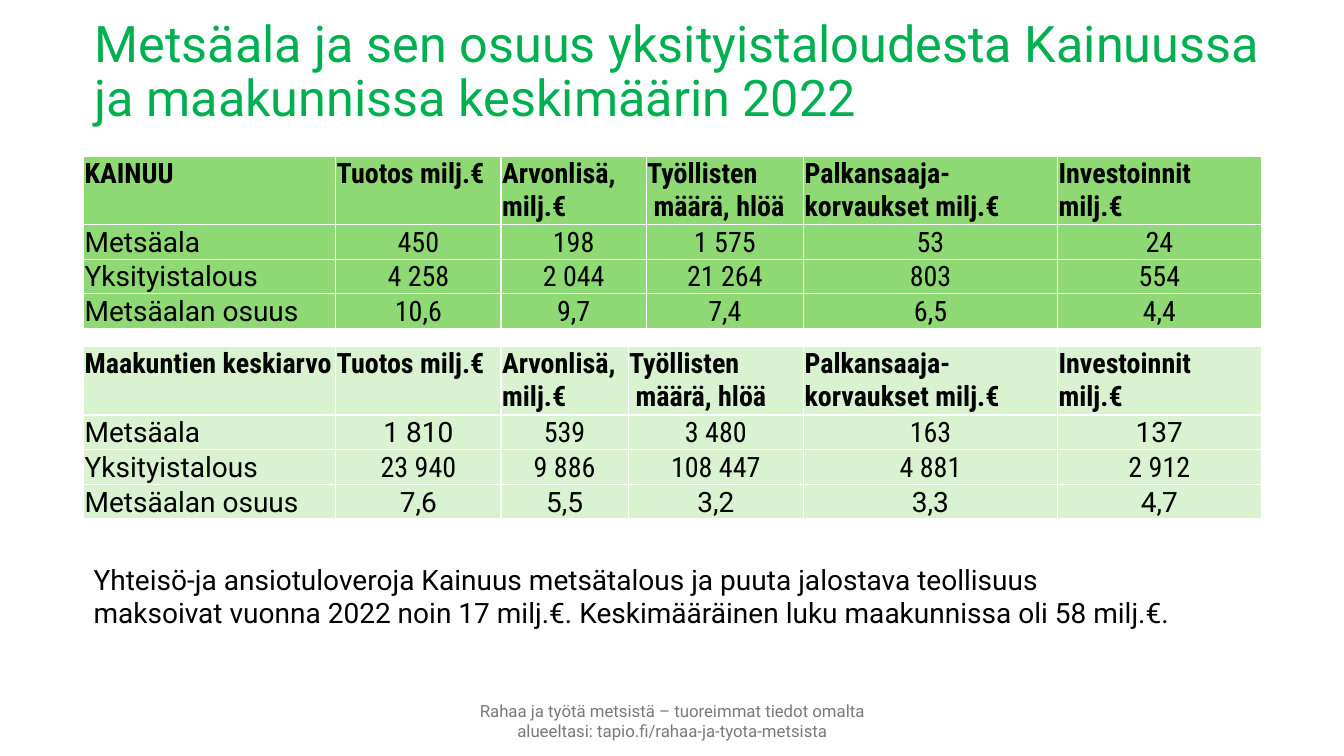
from lxml import etree
from pptx import Presentation
from pptx import util as u
from pptx.dml.color import RGBColor
from pptx.enum import text
from pptx.oxml import ns

PX = 9144  # EMU, 100 px to the inch
GREEN = RGBColor(0x00, 0xB0, 0x50)
MID_GREEN = RGBColor(0x8E, 0xD9, 0x73)
PALE_GREEN = RGBColor(0xD9, 0xF2, 0xD0)
BLACK = RGBColor(0, 0, 0)
GREY = RGBColor(0x79, 0x79, 0x79)
REGULAR, CONDENSED = "Roboto", "Roboto Condensed"

TITLE = "Metsäala ja sen osuus yksityistaloudesta Kainuussa ja maakunnissa keskimäärin 2022"
TAXES = ("Yhteisö-ja ansiotuloveroja Kainuus metsätalous ja puuta jalostava teollisuus "
         "maksoivat vuonna 2022 noin 17 milj.€. Keskimääräinen luku maakunnissa oli 58 milj.€.")
FOOTER = ("Rahaa ja työtä metsistä – tuoreimmat tiedot omalta alueeltasi: "
          "tapio.fi/rahaa-ja-tyota-metsista")
MEASURES = ["Tuotos milj.€", "Arvonlisä, milj.€", "Työllisten\n määrä, hlöä",
            "Palkansaaja-korvaukset milj.€", "Investoinnit\nmilj.€"]

# wide: (row, column) of the figures set in the regular width
REGIONS = [
    dict(top=155, fill=MID_GREEN, widths=[250, 164, 144, 156, 252, 202], wide=set(),
         rows=[["KAINUU", *MEASURES],
               ["Metsäala", "450", "198", "1 575", "53", "24"],
               ["Yksityistalous", "4 258", "2 044", "21 264", "803", "554"],
               ["Metsäalan osuus", "10,6", "9,7", "7,4", "6,5", "4,4"]]),
    dict(top=344, fill=PALE_GREEN, widths=[250, 164, 126, 174, 252, 202],
         wide={(1, 1), (1, 5)} | {(3, column) for column in range(1, 6)},
         rows=[["Maakuntien keskiarvo", *MEASURES],
               ["Metsäala", "1 810", "539", "3 480", "163", "137"],
               ["Yksityistalous", "23 940", "9 886", "108 447", "4 881", "2 912"],
               ["Metsäalan osuus", "7,6", "5,5", "3,2", "3,3", "4,7"]]),
]
TABLE_LEFT, HEADER_HEIGHT, ROW_HEIGHT = 83, 65, 33


def set_font(paragraph, size, color, name=REGULAR, bold=False):
    font = paragraph.font
    font.size, font.name, font.bold = u.Pt(size), name, bold
    font.color.rgb = color


def add_text(slide, box, content, size, color, anchor, align=text.PP_ALIGN.LEFT, spacing=None):
    frame = slide.shapes.add_textbox(*(n * PX for n in box)).text_frame
    frame.word_wrap = True
    frame.vertical_anchor = anchor
    frame.text = content
    paragraph = frame.paragraphs[0]
    paragraph.alignment, paragraph.line_spacing = align, spacing
    set_font(paragraph, size, color)


def add_white_borders(cell):
    properties = cell._tc.get_or_add_tcPr()
    for side in ("lnL", "lnR", "lnT", "lnB"):
        line = etree.SubElement(properties, ns.qn(f"a:{side}"), w=str(u.Pt(1)))
        fill = etree.SubElement(line, ns.qn("a:solidFill"))
        etree.SubElement(fill, ns.qn("a:srgbClr"), val="FFFFFF")


def add_region(slide, region):
    rows, widths = region["rows"], region["widths"]
    heights = [HEADER_HEIGHT] + [ROW_HEIGHT] * (len(rows) - 1)
    box = TABLE_LEFT, region["top"], sum(widths), sum(heights)
    table = slide.shapes.add_table(len(rows), len(widths), *(n * PX for n in box)).table
    for column, width in zip(table.columns, widths):
        column.width = width * PX
    for row, height in zip(table.rows, heights):
        row.height = height * PX
    for r, row in enumerate(rows):
        for c, value in enumerate(row):
            cell = table.cell(r, c)
            header, figure = r == 0, r > 0 and c > 0
            regular = (r, c) in region["wide"] or (c == 0 and not header)
            add_white_borders(cell)
            cell.fill.solid()
            cell.fill.fore_color.rgb = region["fill"]
            cell.margin_left = cell.margin_right = cell.margin_top = PX
            cell.margin_bottom = 0
            cell.vertical_anchor = text.MSO_ANCHOR.TOP if header else text.MSO_ANCHOR.BOTTOM
            cell.text = value
            for paragraph in cell.text_frame.paragraphs:
                paragraph.alignment = text.PP_ALIGN.CENTER if figure else text.PP_ALIGN.LEFT
                set_font(paragraph, 20, BLACK, REGULAR if regular else CONDENSED, header)


def main():
    deck = Presentation()
    deck.slide_width, deck.slide_height = 1333 * PX, 750 * PX
    slide = deck.slides.add_slide(deck.slide_layouts[6])
    add_text(slide, (432, 695, 470, 40), FOOTER, 12, GREY,
             text.MSO_ANCHOR.MIDDLE, text.PP_ALIGN.CENTER)
    add_text(slide, (84, 0, 1219, 145), TITLE, 36, GREEN, text.MSO_ANCHOR.MIDDLE, spacing=0.9)
    for region in REGIONS:
        add_region(slide, region)
    add_text(slide, (83, 553, 1090, 77), TAXES, 20, BLACK, text.MSO_ANCHOR.TOP)
    deck.save("out.pptx")


if __name__ == "__main__":
    main()
